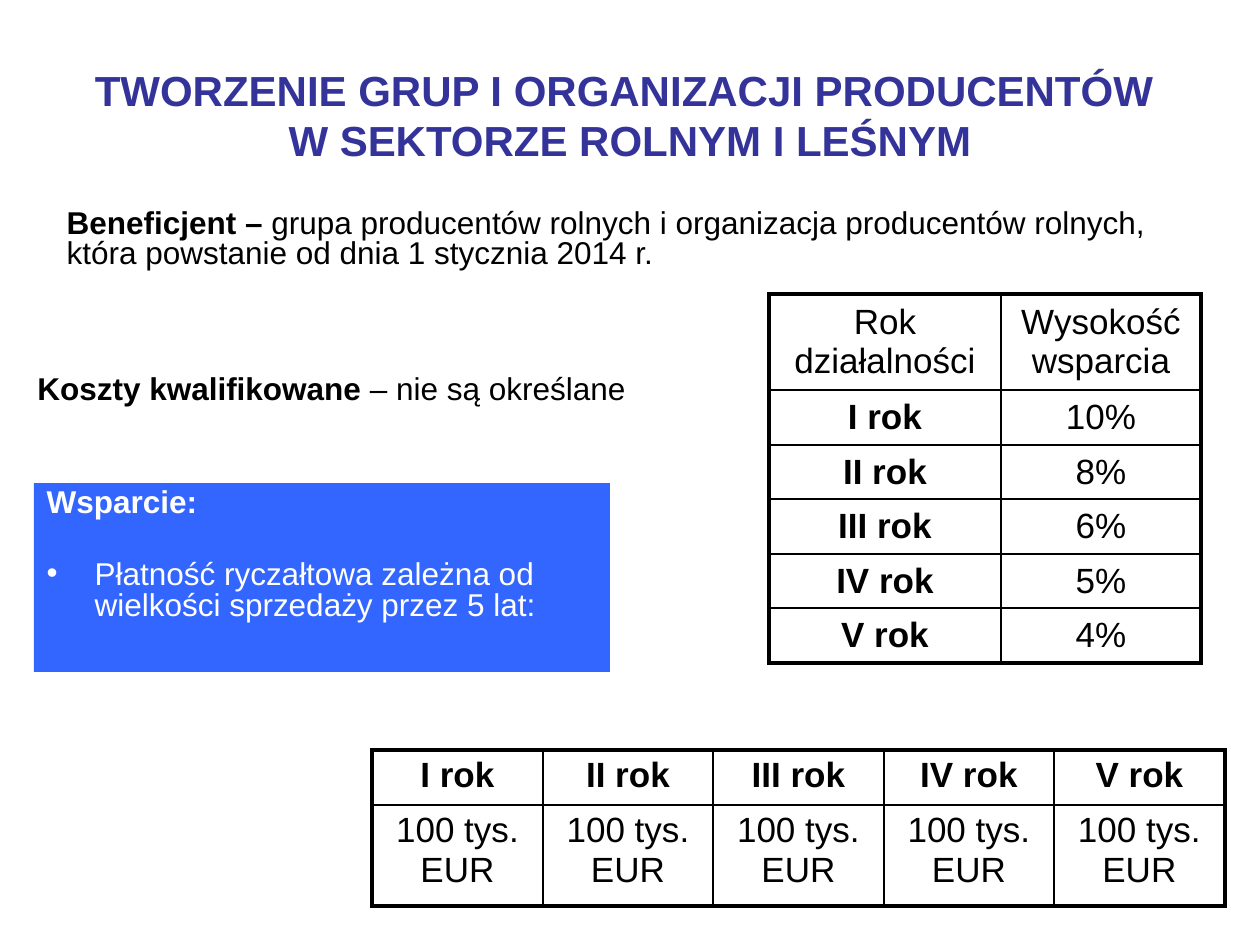
"""Builds the slide on support for producer groups in farming and forestry."""
from dataclasses import dataclass

from lxml import etree
from pptx import Presentation
from pptx.dml.color import RGBColor
from pptx.enum.text import MSO_ANCHOR, MSO_AUTO_SIZE, PP_ALIGN
from pptx.oxml.ns import qn
from pptx.util import Pt

EMU_PER_PX = 914400 / 126
LEFT, CENTER = PP_ALIGN.LEFT, PP_ALIGN.CENTER
TOP, MIDDLE = MSO_ANCHOR.TOP, MSO_ANCHOR.MIDDLE
NO_AUTOFIT = MSO_AUTO_SIZE.NONE
TWO_CONTENT_LAYOUT = 3


def px(length):
    """Turns pixels into EMU."""
    return round(length * EMU_PER_PX)


@dataclass(frozen=True)
class Theme:
    """Colours, type sizes and line widths of the slide."""
    font: str = "Arial"
    title: str = "333399"
    text: str = "000000"
    panel: str = "3366FF"
    panel_text: str = "FFFFFF"
    title_size: int = 24
    body_size: int = 18
    table_size: int = 20
    outer_line: float = 2.25
    inner_line: float = 1
    space_before: float = 3.6
    hanging: int = 48


class SlideBuilder:
    """Holds the theme and the current slide, with a method for each element."""

    def __init__(self, slide, theme):
        """Keeps the slide and the theme."""
        self.slide = slide
        self.theme = theme

    def place(self, shape, box, anchor=TOP):
        """Moves a text shape and prepares its frame."""
        shape.left, shape.top, shape.width, shape.height = map(px, box)
        frame = shape.text_frame
        frame.word_wrap = True
        frame.auto_size = NO_AUTOFIT
        frame.vertical_anchor = anchor
        return frame

    def add_run(self, paragraph, text, size, color, bold=False):
        """Adds one formatted run."""
        run = paragraph.add_run()
        run.text = text
        run.font.name = self.theme.font
        run.font.size = Pt(size)
        run.font.bold = bold
        run.font.color.rgb = RGBColor.from_string(color)

    def fill_paragraph(self, paragraph, runs, color, spacing=1.0, before=None, hanging=0, bullet=None):
        """Writes a body paragraph with its spacing, indent and bullet."""
        paragraph.alignment = LEFT
        paragraph.line_spacing = spacing
        paragraph.space_before = Pt(before or self.theme.space_before)
        properties = paragraph._p.get_or_add_pPr()
        properties.set("marL", str(px(hanging)))
        properties.set("indent", str(-px(hanging)))
        if bullet:
            etree.SubElement(properties, qn("a:buChar"), char=bullet)
        else:
            etree.SubElement(properties, qn("a:buNone"))
        for text, bold in runs:
            self.add_run(paragraph, text, self.theme.body_size, color, bold)

    def title(self, lines, box):
        """Fills the title placeholder."""
        paragraph = self.place(self.slide.shapes.title, box, MIDDLE).paragraphs[0]
        paragraph.alignment = CENTER
        for index, line in enumerate(lines):
            if index:
                paragraph.add_line_break()
            self.add_run(paragraph, line, self.theme.title_size, self.theme.title, True)

    def body(self, number, runs, box):
        """Fills a body placeholder with one paragraph."""
        frame = self.place(self.slide.placeholders[number], box)
        self.fill_paragraph(frame.paragraphs[0], runs, self.theme.text, 0.8)

    def panel(self, number, heading, item, box):
        """Fills a body placeholder as a coloured panel with a bulleted item."""
        shape = self.slide.placeholders[number]
        frame = self.place(shape, box)
        shape.fill.solid()
        shape.fill.fore_color.rgb = RGBColor.from_string(self.theme.panel)
        color, hanging = self.theme.panel_text, self.theme.hanging
        self.fill_paragraph(frame.paragraphs[0], [(heading, True)], color, 0.8, hanging=hanging)
        self.fill_paragraph(frame.add_paragraph(), [(item, False)], color, 0.8, 24, hanging, "•")

    def text_box(self, runs, box):
        """Adds a text box with one hanging paragraph."""
        frame = self.place(self.slide.shapes.add_textbox(0, 0, 0, 0), box)
        self.fill_paragraph(frame.paragraphs[0], runs, self.theme.text, hanging=self.theme.hanging)

    def cell_border(self, cell, side, outer):
        """Draws one side of a table cell."""
        width = self.theme.outer_line if outer else self.theme.inner_line
        line = etree.SubElement(cell._tc.get_or_add_tcPr(), qn(f"a:ln{side}"), w=str(Pt(width)))
        fill = etree.SubElement(line, qn("a:solidFill"))
        etree.SubElement(fill, qn("a:srgbClr"), val=self.theme.text)

    def table(self, rows, left, top, widths, heights, anchor):
        """Adds a ruled table whose cells are (text, bold) pairs."""
        box = map(px, (left, top, sum(widths), sum(heights)))
        table = self.slide.shapes.add_table(len(rows), len(widths), *box).table
        table.first_row = table.horz_banding = False
        for column, width in zip(table.columns, widths):
            column.width = px(width)
        for row, height in zip(table.rows, heights):
            row.height = px(height)
        last_row, last_column = len(rows) - 1, len(widths) - 1
        for row_index, row in enumerate(rows):
            for column_index, (text, bold) in enumerate(row):
                cell = table.cell(row_index, column_index)
                outer_sides = {
                    "L": column_index == 0,
                    "R": column_index == last_column,
                    "T": row_index == 0,
                    "B": row_index == last_row,
                }
                for side, outer in outer_sides.items():
                    self.cell_border(cell, side, outer)
                cell.fill.background()
                cell.vertical_anchor = anchor
                paragraph = cell.text_frame.paragraphs[0]
                paragraph.alignment = CENTER
                self.add_run(paragraph, text, self.theme.table_size, self.theme.text, bold)


def main():
    """Builds and saves the presentation."""
    presentation = Presentation()
    presentation.slide_width, presentation.slide_height = px(1260), px(945)
    slide = presentation.slides.add_slide(presentation.slide_layouts[TWO_CONTENT_LAYOUT])
    builder = SlideBuilder(slide, Theme())

    builder.title(
        ["TWORZENIE GRUP I ORGANIZACJI PRODUCENTÓW ", "W SEKTORZE ROLNYM I LEŚNYM"],
        (0, 45, 1260, 139),
    )
    builder.body(1, [
        ("Beneficjent – ", True),
        ("grupa producentów rolnych i organizacja producentów rolnych, "
         "która powstanie od dnia 1 stycznia 2014 r.", False),
    ], (54, 204, 1133, 100))
    builder.panel(
        2, "Wsparcie:", "Płatność ryczałtowa zależna od wielkości sprzedaży przez 5 lat:",
        (34, 483, 576, 189),
    )
    builder.text_box(
        [("Koszty kwalifikowane ", True), ("– nie są określane", False)], (25, 363, 620, 69))

    years = [f"{numeral} rok" for numeral in ("I", "II", "III", "IV", "V")]
    rates = ["10%", "8%", "6%", "5%", "4%"]
    rate_rows = [[("Rok działalności", False), ("Wysokość wsparcia", False)]]
    rate_rows += [[(year, True), (rate, False)] for year, rate in zip(years, rates)]
    builder.table(rate_rows, 769, 294, [232, 200], [96, 55, 54, 55, 54, 55], MIDDLE)

    limit_rows = [[(year, True) for year in years], [("100 tys. EUR", False)] * len(years)]
    builder.table(limit_rows, 372, 750, [171, 170, 171, 170, 171], [55, 101], TOP)

    presentation.save("out.pptx")


if __name__ == "__main__":
    main()
